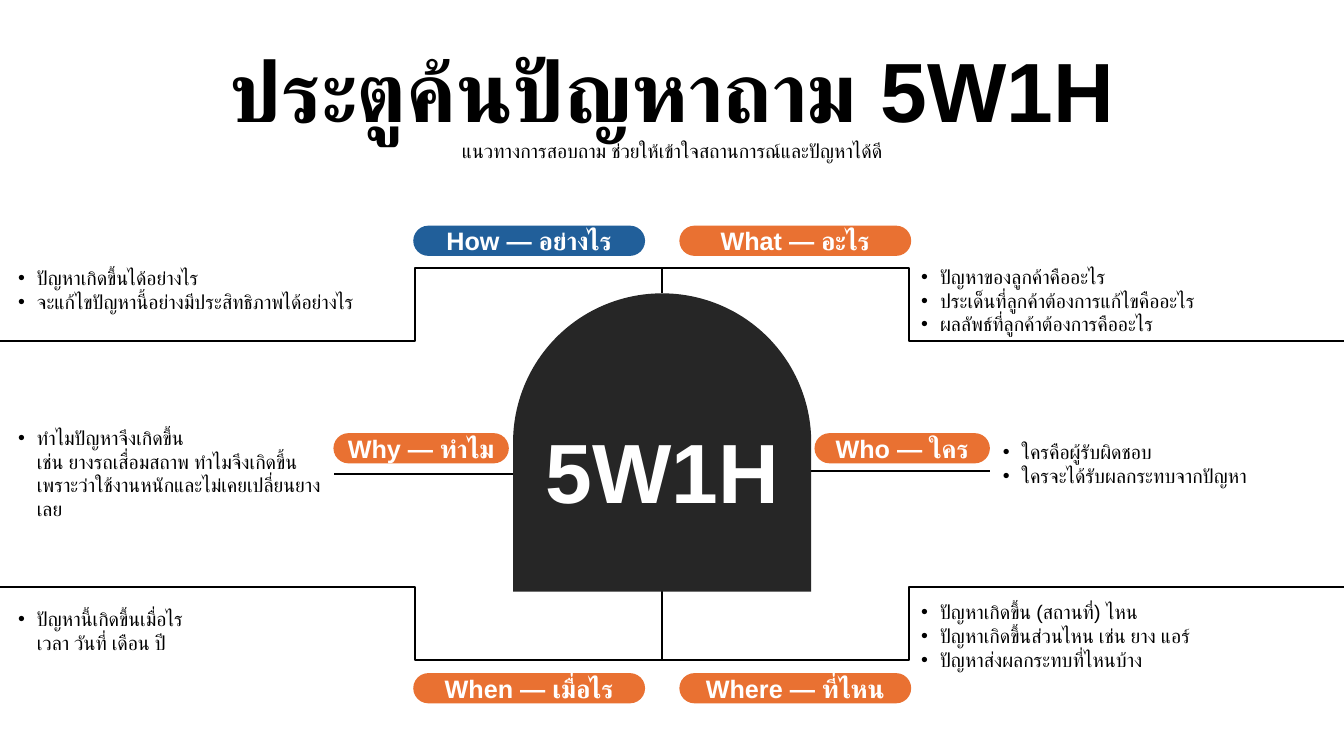
"""Build the 5W1H problem-door slide."""
from dataclasses import dataclass

from lxml.etree import SubElement
from pptx import Presentation
from pptx.dml.color import RGBColor
from pptx.enum.shapes import MSO_CONNECTOR as Link, MSO_SHAPE as Kind
from pptx.enum.text import MSO_ANCHOR as Anchor, MSO_AUTO_SIZE as Fit, PP_ALIGN as Align
from pptx.oxml.ns import qn
from pptx.shapes.autoshape import Shape
from pptx.shapes.connector import Connector
from pptx.shapes.shapetree import SlideShapes
from pptx.text.text import _Paragraph as Para
from pptx.util import Pt

BLACK = RGBColor(0, 0, 0)
WHITE = RGBColor(255, 255, 255)
DARK = RGBColor(0x26, 0x26, 0x26)
ORANGE = RGBColor(0xE9, 0x71, 0x32)
BLUE = RGBColor(0x21, 0x5F, 0x9A)

WIDTH, HEIGHT = 960, 540
MID = 473
DOOR = 213
LEFT, RIGHT = MID - DOOR / 2, MID + DOOR / 2
TOP = 209.5
BASE = TOP + DOOR
INDENT = 13.5


@dataclass
class Pill:
    text: str
    left: float
    top: float
    width: float
    fill: RGBColor = ORANGE


@dataclass
class Note:
    left: float
    top: float
    width: float
    height: float
    items: tuple[str, ...]


@dataclass
class Wire:
    start: tuple[float, float]
    end: tuple[float, float]


@dataclass
class Bend(Wire):
    turn: tuple[float, float]


PILLS = (
    Pill("How — อย่างไร", 295.2, 161.2, 165.6, BLUE),
    Pill("What — อะไร", 485.3, 161.2, 165.6),
    Pill("Why — ทำไม", 238.2, 309.4, 125.3),
    Pill("Who — ใคร", 581.8, 309.4, 125.3),
    Pill("When — เมื่อไร", 295.2, 480.8, 165.6),
    Pill("Where — ที่ไหน", 485.3, 480.8, 165.6),
)

NOTES = (
    Note(5.8, 186.5, 296.6, 41, (
        "ปัญหาเกิดขึ้นได้อย่างไร",
        "จะแก้ไขปัญหานี้อย่างมีประสิทธิภาพได้อย่างไร")),
    Note(650.9, 185.3, 296.6, 58.3, (
        "ปัญหาของลูกค้าคืออะไร",
        "ประเด็นที่ลูกค้าต้องการแก้ไขคืออะไร",
        "ผลลัพธ์ที่ลูกค้าต้องการคืออะไร")),
    Note(5.8, 300.5, 238.3, 75, (
        "ทำไมปัญหาจึงเกิดขึ้น\nเช่น ยางรถเสื่อมสถาพ ทำไมจึงเกิดขึ้น "
        "เพราะว่าใช้งานหนักและไม่เคยเปลี่ยนยางเลย",)),
    Note(709.2, 310.6, 238.3, 41, (
        "ใครคือผู้รับผิดชอบ",
        "ใครจะได้รับผลกระทบจากปัญหา")),
    Note(5.8, 430, 296.6, 41, (
        "ปัญหานี้เกิดขึ้นเมื่อไร\nเวลา วันที่ เดือน ปี",)),
    Note(650.9, 424.9, 296.6, 58.3, (
        "ปัญหาเกิดขึ้น (สถานที่) ไหน",
        "ปัญหาเกิดขึ้นส่วนไหน เช่น ยาง แอร์",
        "ปัญหาส่งผลกระทบที่ไหนบ้าง")),
)

WIRES = (
    Wire((LEFT, 338.4), (238.7, 338.4)),
    Wire((RIGHT, 336.3), (707, 336.3)),
    Wire((MID, BASE), (MID, 471.6)),
)

BENDS = tuple(
    Bend((edge, start), (MID, end), (turn, far))
    for start, end, far in ((243.8, TOP, 191.4), (419.4, 453.6, 471.6))
    for edge, turn in ((0, 296.6), (WIDTH, 649.4))
)


def style(para: Para, size: float, color: RGBColor, bold: bool) -> None:
    """Format every run of a paragraph."""
    for run in para.runs:
        font = run.font
        font.name, font.size, font.bold = "Arial", Pt(size), bold
        font.color.rgb = color


def write(shape: Shape, text: str, size: float, color: RGBColor) -> None:
    """Put one bold centred line in a shape."""
    para = shape.text_frame.paragraphs[0]
    para.text = text
    para.alignment = Align.CENTER
    style(para, size, color, True)


def add_box(shapes: SlideShapes, left: float, top: float, width: float, height: float) -> Shape:
    """Add a wrapping text box that grows with its text."""
    box = shapes.add_textbox(Pt(left), Pt(top), Pt(width), Pt(height))
    box.text_frame.word_wrap = True
    box.text_frame.auto_size = Fit.SHAPE_TO_FIT_TEXT
    return box


def add_form(shapes: SlideShapes, kind: Kind, left: float, top: float,
             width: float, height: float, fill: RGBColor) -> Shape:
    """Add a plain filled shape without a line."""
    form = shapes.add_shape(kind, Pt(left), Pt(top), Pt(width), Pt(height))
    form.shadow.inherit = False
    form.fill.solid()
    form.fill.fore_color.rgb = fill
    form.line.fill.background()
    return form


def add_pill(shapes: SlideShapes, pill: Pill) -> None:
    """Draw one question label."""
    form = add_form(shapes, Kind.ROUNDED_RECTANGLE, pill.left, pill.top, pill.width, 21.6, pill.fill)
    form.adjustments[0] = 0.5
    form.text_frame.vertical_anchor = Anchor.MIDDLE
    write(form, pill.text, 18, WHITE)


def add_note(shapes: SlideShapes, note: Note) -> None:
    """Draw one bulleted list."""
    frame = add_box(shapes, note.left, note.top, note.width, note.height).text_frame
    frame.vertical_anchor = Anchor.MIDDLE
    for i, item in enumerate(note.items):
        para = frame.add_paragraph() if i else frame.paragraphs[0]
        para.text = item
        props = para._p.get_or_add_pPr()
        props.set("marL", str(Pt(INDENT)))
        props.set("indent", str(-Pt(INDENT)))
        SubElement(props, qn("a:buFont")).set("typeface", "Arial")
        SubElement(props, qn("a:buChar")).set("char", "•")
        style(para, 14, BLACK, False)


def add_wire(shapes: SlideShapes, wire: Wire, kind: Link = Link.STRAIGHT) -> Connector:
    """Draw one thin black connector."""
    line = shapes.add_connector(kind, *map(Pt, wire.start + wire.end))
    line.line.color.rgb = BLACK
    line.line.width = Pt(1.5)
    SubElement(line._element.spPr, qn("a:effectLst"))
    return line


def add_bend(shapes: SlideShapes, bend: Bend) -> None:
    """Draw a connector with three corners."""
    line = add_wire(shapes, bend, Link.ELBOW)
    geom = line._element.spPr.find(qn("a:prstGeom"))
    geom.set("prst", "bentConnector4")
    guides = geom.find(qn("a:avLst"))
    for i, (a, b, turn) in enumerate(zip(bend.start, bend.end, bend.turn), 1):
        guide = SubElement(guides, qn("a:gd"))
        guide.set("name", f"adj{i}")
        guide.set("fmla", f"val {round((turn - a) / (b - a) * 100000)}")


def main() -> None:
    """Draw the slide and save it."""
    deck = Presentation()
    deck.slide_width, deck.slide_height = Pt(WIDTH), Pt(HEIGHT)
    shapes = deck.slides.add_slide(deck.slide_layouts[6]).shapes
    for bend in BENDS:
        add_bend(shapes, bend)
    for wire in WIRES:
        add_wire(shapes, wire)
    title = add_box(shapes, 0, 23.8, WIDTH, 97.2)
    write(title, "ประตูค้นปัญหาถาม 5W1H", 60, BLACK)
    para = title.text_frame.add_paragraph()
    para.text = "แนวทางการสอบถาม ช่วยให้เข้าใจสถานการณ์และปัญหาได้ดี"
    para.alignment = Align.CENTER
    style(para, 14, BLACK, False)
    add_form(shapes, Kind.FLOWCHART_DELAY, LEFT, TOP, DOOR, DOOR, DARK).rotation = 270
    write(add_box(shapes, LEFT, 296, DOOR, 80), "5W1H", 60, WHITE)
    for pill in PILLS:
        add_pill(shapes, pill)
    for note in NOTES:
        add_note(shapes, note)
    deck.save("out.pptx")


if __name__ == "__main__":
    main()
